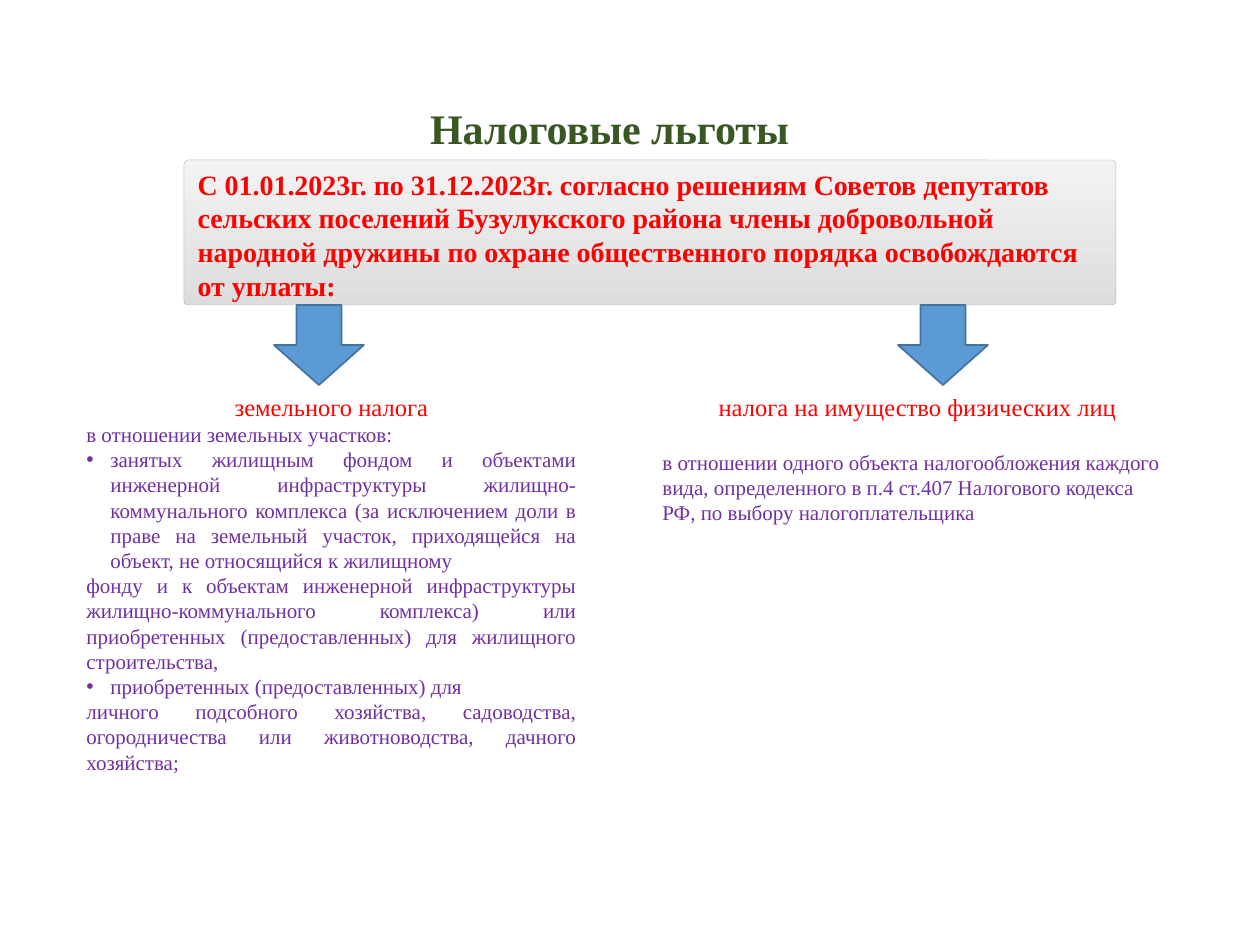
from lxml import etree
from pptx import Presentation
from pptx import util as u
from pptx.dml.color import RGBColor
from pptx.enum import shapes, text
from pptx.oxml.ns import qn

SCALE = 914400 / 126
GREEN, RED, PURPLE = "385723", "FF0000", "7030A0"
CENTER, JUSTIFY, LEFT = (text.PP_ALIGN.CENTER, text.PP_ALIGN.JUSTIFY,
                         text.PP_ALIGN.LEFT)
INDENT = 24


def px(length):
    return u.Emu(round(length * SCALE))


def rgb(code):
    return RGBColor.from_string(code)


def assign(target, values):
    for name, value in values.items():
        setattr(target, name, value)


class SlideBuilder:
    font = "Times New Roman"

    def __init__(self, slide):
        self.slide = slide

    def paragraph(self, frame, words, size, color, align=LEFT, bold=False,
                  bullet=False, before=0):
        line = frame.paragraphs[0]
        if line.runs:
            line = frame.add_paragraph()
        if bullet:
            props = line._p.get_or_add_pPr()
            props.set("marL", str(px(INDENT)))
            props.set("indent", str(-px(INDENT)))
            etree.SubElement(props, qn("a:buFont")).set("typeface", "Arial")
            etree.SubElement(props, qn("a:buChar")).set("char", "•")
        assign(line, {"alignment": align, "space_before": u.Pt(before)})
        run = line.add_run()
        run.text = words
        assign(run.font, {"name": self.font, "size": u.Pt(size), "bold": bold})
        run.font.color.rgb = rgb(color)

    def text_box(self, box, paragraphs):
        frame = self.slide.shapes.add_textbox(*map(px, box)).text_frame
        frame.word_wrap = True
        for values in paragraphs:
            self.paragraph(frame, **values)

    def shape(self, kind, box, line_color, line_width):
        item = self.slide.shapes.add_shape(kind, *map(px, box))
        item.shadow.inherit = False
        item.line.color.rgb = rgb(line_color)
        item.line.width = u.Pt(line_width)
        return item

    def banner(self, box, words):
        panel = self.shape(shapes.MSO_SHAPE.ROUNDED_RECTANGLE, box, "969696", 0.25)
        panel.adjustments[0] = 0.03
        panel.fill.gradient()
        panel.fill.gradient_angle = 270
        for stop, color in zip(panel.fill.gradient_stops, ("F3F3F3", "DDDDDD")):
            stop.color.rgb = rgb(color)
        outline = panel.line._ln.find(".//" + qn("a:srgbClr"))
        etree.SubElement(outline, qn("a:alpha")).set("val", "59000")
        assign(panel.text_frame, {"word_wrap": True,
                                  "vertical_anchor": text.MSO_ANCHOR.TOP})
        self.paragraph(panel.text_frame, words, 16, RED, bold=True)

    def down_arrow(self, box):
        arrow = self.shape(shapes.MSO_SHAPE.DOWN_ARROW, box, "43739E", 1)
        arrow.fill.solid()
        arrow.fill.fore_color.rgb = rgb("5B9BD5")


def heading(words):
    return {"words": words, "size": 14, "color": RED, "align": CENTER}


def detail(words, **extra):
    return {"words": words, "size": 12, "color": PURPLE, **extra}


LAND_TAX = [
    ("в отношении земельных участков:", False),
    ("занятых жилищным фондом и объектами инженерной инфраструктуры "
     "жилищно-коммунального комплекса (за исключением доли в праве на "
     "земельный участок, приходящейся на объект, не относящийся к жилищному",
     True),
    ("фонду и к объектам инженерной инфраструктуры жилищно-коммунального "
     "комплекса) или приобретенных (предоставленных) для жилищного "
     "строительства,", False),
    ("приобретенных (предоставленных) для", True),
    ("личного подсобного хозяйства, садоводства, огородничества или "
     "животноводства, дачного хозяйства;", False),
]


def main():
    deck = Presentation()
    assign(deck, {"slide_width": px(1260), "slide_height": px(945)})
    page = SlideBuilder(deck.slides.add_slide(deck.slide_layouts[6]))

    page.text_box((302, 96, 615, 63), [
        {"words": "Налоговые льготы", "size": 24, "color": GREEN,
         "align": CENTER, "bold": True}])
    page.banner((184, 160, 932, 145),
                "С 01.01.2023г. по 31.12.2023г. согласно решениям Советов "
                "депутатов сельских поселений Бузулукского района члены "
                "добровольной народной дружины по охране общественного "
                "порядка освобождаются от уплаты:")
    for left in (274, 898):
        page.down_arrow((left, 305, 90, 80))

    page.text_box((74, 386, 515, 398), [
        heading("земельного налога"),
        *(detail(words, align=JUSTIFY, bullet=bullet)
          for words, bullet in LAND_TAX)])
    page.text_box((650, 386, 535, 149), [
        heading("налога на имущество физических лиц"),
        detail("в отношении одного объекта налогообложения каждого вида, "
               "определенного в п.4 ст.407 Налогового кодекса РФ, по выбору "
               "налогоплательщика", before=16)])
    deck.save("out.pptx")


if __name__ == "__main__":
    main()
